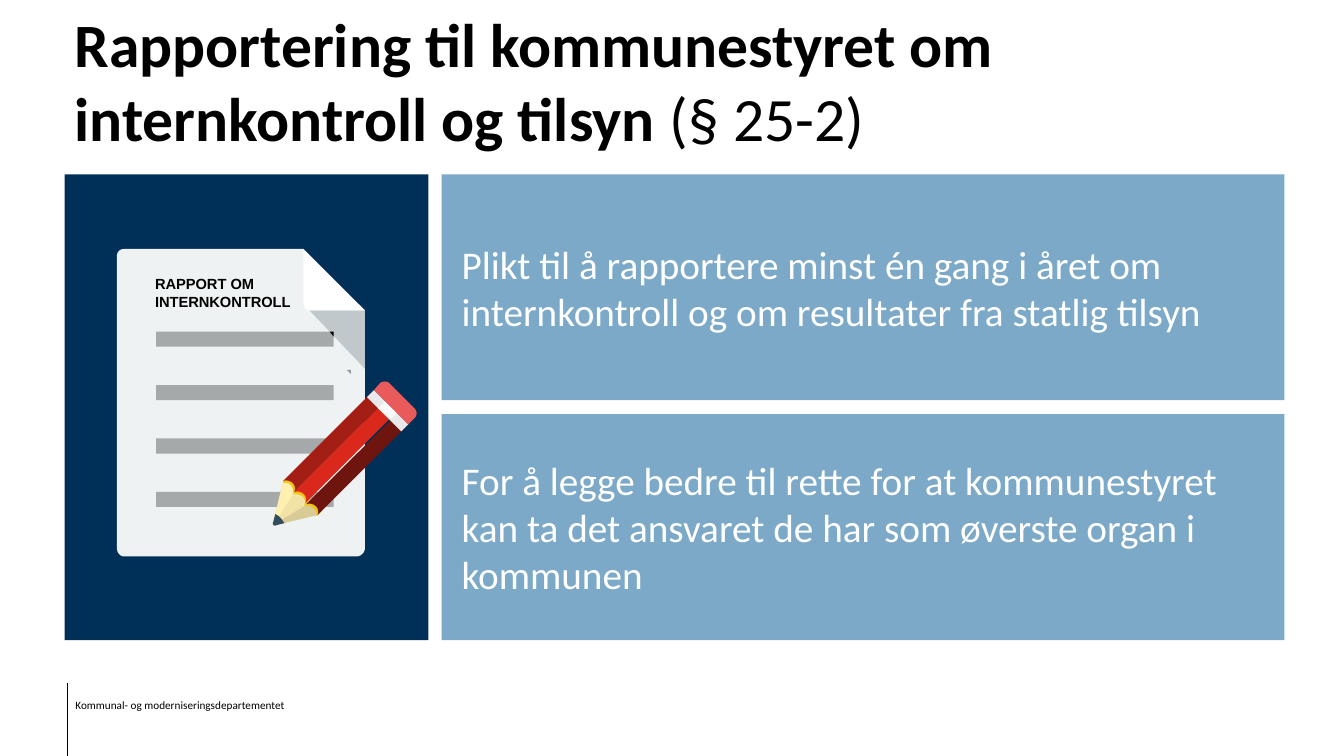
from dataclasses import dataclass

from lxml.etree import SubElement
from pptx import Presentation
from pptx.dml.color import RGBColor
from pptx.enum.shapes import MSO_CONNECTOR, MSO_SHAPE
from pptx.enum.text import MSO_ANCHOR, PP_ALIGN
from pptx.oxml.ns import qn
from pptx.util import Inches, Pt


@dataclass(frozen=True)
class Theme:
    font: str = "Calibri"
    label_font: str = "Arial"
    title_size: float = 44
    body_size: float = 28
    label_size: float = 10.5
    footer_size: float = 8
    black: str = "000000"
    white: str = "FFFFFF"
    navy: str = "003057"
    blue: str = "7BA9C7"
    paper: str = "EEF2F2"
    paper_shadow: str = "0D2038"
    bar: str = "A6A9A9"
    speck: str = "989B9B"
    wood: str = "F1E2A6"
    wood_dark: str = "D8CB95"
    wood_light: str = "FFEFB0"
    wood_rim: str = "F1C40F"
    red: str = "DA291C"
    red_dark: str = "6D150E"
    red_mid: str = "A31F15"
    lead: str = "334D5C"
    ferrule: str = "E9E9EB"
    ferrule_shine: str = "F8F9FA"
    eraser: str = "E95B5B"


T = Theme()
CURVE_STEPS = 8


def set_font(font, size, color, name=T.font, bold=False):
    font.name, font.size, font.bold = name, Pt(size), bold
    font.color.rgb = RGBColor.from_string(color)


def paint(sp, color):
    sp.shadow.inherit = False
    sp.fill.solid()
    sp.fill.fore_color.rgb = RGBColor.from_string(color)
    sp.line.fill.background()
    return sp


def add_rect(shapes, x, y, w, h, color):
    sp = shapes.add_shape(MSO_SHAPE.RECTANGLE, Inches(x), Inches(y), Inches(w), Inches(h))
    return paint(sp, color)


def add_text(shapes, x, y, w, h, wrap=True):
    tf = shapes.add_textbox(Inches(x), Inches(y), Inches(w), Inches(h)).text_frame
    tf.word_wrap = wrap
    return tf


def add_card(shapes, y, text):
    tf = add_rect(shapes, 4.38, y, 8.36, 2.24, T.blue).text_frame
    tf.word_wrap = True
    tf.vertical_anchor = MSO_ANCHOR.MIDDLE
    tf.margin_left = Inches(0.2)
    p = tf.paragraphs[0]
    p.text = text
    p.alignment = PP_ALIGN.LEFT
    set_font(p.font, T.body_size, T.white)


def flatten(steps):
    """Turn points (x, y) and cubic curves (x1, y1, x2, y2, x, y) into points."""
    points = [steps[0]]
    for step in steps[1:]:
        if len(step) == 2:
            points.append(step)
            continue
        corners = (points[-1], step[:2], step[2:4], step[4:])
        for i in range(1, CURVE_STEPS + 1):
            t = i / CURVE_STEPS
            weights = ((1 - t) ** 3, 3 * t * (1 - t) ** 2, 3 * t * t * (1 - t), t ** 3)
            points.append(tuple(sum(w * c[k] for w, c in zip(weights, corners))
                                for k in (0, 1)))
    return points


def add_outline(shapes, color, *steps):
    points = [(Inches(x), Inches(y)) for x, y in flatten(steps)]
    builder = shapes.build_freeform(*points[0], scale=1.0)
    builder.add_line_segments(points[1:], close=True)
    return paint(builder.convert_to_shape(), color)


def add_report(shapes):
    # Sheet with folded corner
    add_outline(shapes, T.paper, (3.62, 5.44), (3.62, 5.48, 3.58, 5.52, 3.54, 5.52),
                (1.23, 5.52), (1.19, 5.52, 1.16, 5.48, 1.16, 5.44),
                (1.16, 2.54), (1.16, 2.5, 1.19, 2.47, 1.23, 2.47),
                (3.01, 2.47), (3.62, 3.08))
    shade = add_outline(shapes, T.paper_shadow, (3.62, 3.66), (3.07, 3.08), (3.62, 3.08))
    color = shade.fill._xPr.find(qn("a:solidFill"))[0]
    SubElement(color, qn("a:alpha"), val="20000")
    add_outline(shapes, T.white, (3.62, 3.08), (3.08, 3.08),
                (3.04, 3.08, 3.01, 3.05, 3.01, 3), (3.01, 2.47))

    # Text bars
    for i in range(4):
        add_rect(shapes, 1.55, 3.29 + 0.53 * i, 1.76, 0.15, T.bar)
    add_outline(shapes, T.black, (3.31, 3.29), (3.27, 3.29), (3.31, 3.34))

    # Heading on the sheet
    p = add_text(shapes, 1.44, 2.68, 1.57, 0.45, wrap=False).paragraphs[0]
    p.text = "RAPPORT OM\vINTERNKONTROLL"
    set_font(p.font, T.label_size, T.black, T.label_font, bold=True)


def add_pencil(shapes):
    add_outline(shapes, T.speck, (3.48, 3.67), (3.44, 3.67), (3.48, 3.71))

    # Wooden tip
    add_outline(shapes, T.wood, (2.86, 4.74), (2.81, 4.77), (2.71, 5.18),
                (2.7, 5.19, 2.71, 5.21, 2.73, 5.21), (3.15, 5.11), (3.19, 5.07))
    add_outline(shapes, T.wood_dark, (3.06, 5.01), (3.04, 5.01, 3.03, 5.01, 3.02, 5.02),
                (2.71, 5.21), (2.73, 5.21), (3.15, 5.11), (3.19, 5.07),
                (3.14, 5.03, 3.09, 5.01, 3.06, 5.01))
    add_outline(shapes, T.wood_light, (2.92, 4.88), (2.71, 5.21), (2.71, 5.18),
                (2.81, 4.79), (2.81, 4.77), (2.86, 4.74))
    add_outline(shapes, T.wood_rim, (3.19, 5.07), (3.14, 5.12),
                (3.15, 5.05, 3.08, 5, 3.02, 5.02), (3.06, 4.89, 2.91, 4.9, 2.91, 4.9),
                (2.91, 4.9, 2.92, 4.77, 2.81, 4.79), (2.81, 4.77), (2.86, 4.73))

    # Three parallel stripes of the shaft
    for d, color in ((0, T.red_mid), (0.11, T.red), (0.23, T.red_dark)):
        add_outline(shapes, color, (2.81 + d, 4.77 + d),
                    (2.88 + d, 4.75 + d, 2.95 + d, 4.81 + d, 2.92 + d, 4.88 + d),
                    (3.79 + d, 4.01 + d), (3.68 + d, 3.9 + d))

    # Lead, ferrule and eraser
    add_outline(shapes, T.lead, (2.82, 5.19), (2.74, 5.21), (2.73, 5.22, 2.72, 5.21, 2.71, 5.21),
                (2.71, 5.2, 2.7, 5.19, 2.71, 5.18), (2.73, 5.1),
                (2.77, 5.12, 2.79, 5.14, 2.82, 5.19))
    add_outline(shapes, T.ferrule, (3.98, 4.28), (3.64, 3.94), (3.71, 3.87), (4.05, 4.21))
    add_outline(shapes, T.ferrule_shine, (3.87, 4.16), (3.75, 4.05), (3.82, 3.98), (3.94, 4.1))
    add_outline(shapes, T.eraser, (4.05, 4.21), (3.71, 3.87), (3.77, 3.8),
                (3.8, 3.78, 3.84, 3.78, 3.86, 3.8), (4.11, 4.05),
                (4.14, 4.08, 4.14, 4.12, 4.11, 4.15))


def add_footer(shapes):
    p = add_text(shapes, 0.65, 6.89, 2.83, 0.22).paragraphs[0]
    p.text = "Kommunal- og moderniseringsdepartementet"
    p.line_spacing = 0.9
    set_font(p.font, T.footer_size, T.black)
    rule = shapes.add_connector(MSO_CONNECTOR.STRAIGHT, Inches(0.67), Inches(6.78),
                                Inches(0.67), Inches(7.5))
    rule.line.color.rgb = RGBColor.from_string(T.black)
    rule.line.width = Pt(0.75)
    SubElement(rule._element.spPr, qn("a:effectLst"))


def add_title(shapes):
    tf = add_text(shapes, 0.64, 0.32, 12.1, 1.25)
    tf.vertical_anchor = MSO_ANCHOR.BOTTOM
    p = tf.paragraphs[0]
    for text, bold in (("Rapportering til kommunestyret om internkontroll og tilsyn ", True),
                       ("(§ 25-2)", False)):
        r = p.add_run()
        r.text = text
        set_font(r.font, T.title_size, T.black, bold=bold)


def main():
    prs = Presentation()
    prs.slide_width, prs.slide_height = Inches(13.33), Inches(7.5)
    s = prs.slides.add_slide(prs.slide_layouts[6])

    add_footer(s.shapes)
    add_title(s.shapes)

    # Message cards
    add_card(s.shapes, 1.73, "Plikt til å rapportere minst én gang i året om "
             "internkontroll og om resultater fra statlig tilsyn")
    add_card(s.shapes, 4.11, "For å legge bedre til rette for at kommunestyret "
             "kan ta det ansvaret de har som øverste organ i kommunen")

    # Illustration panel
    add_rect(s.shapes, 0.64, 1.73, 3.61, 4.62, T.navy)
    add_report(s.shapes.add_group_shape().shapes)
    add_pencil(s.shapes.add_group_shape().shapes)

    prs.save("out.pptx")


if __name__ == "__main__":
    main()
